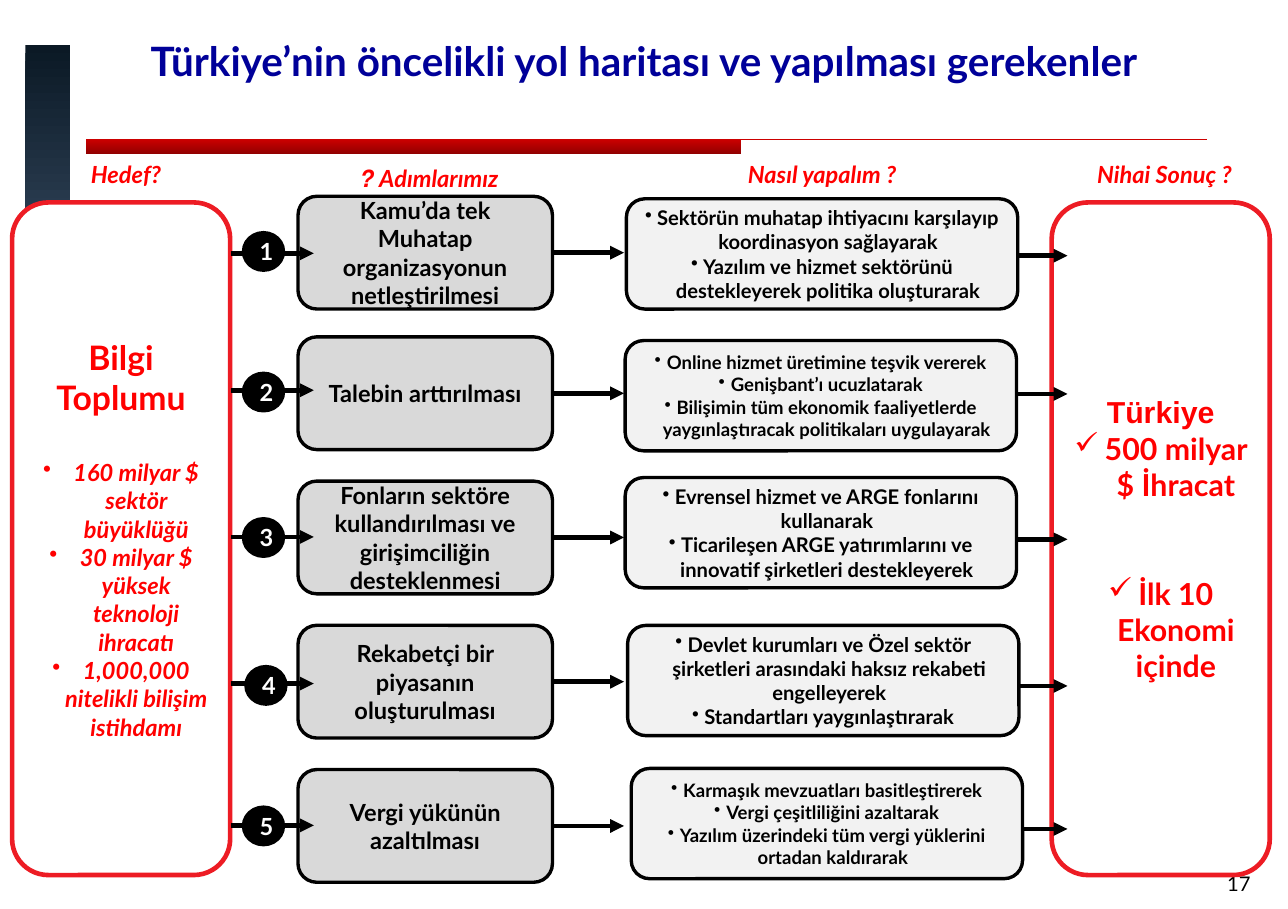
from pptx import Presentation
from pptx.dml.color import RGBColor
from pptx.enum.shapes import MSO_CONNECTOR, MSO_SHAPE
from pptx.enum.text import MSO_ANCHOR, PP_ALIGN
from pptx.oxml.ns import qn
from pptx.util import Inches, Pt
from lxml import etree

BLACK = RGBColor(0x00, 0x00, 0x00)
WHITE = RGBColor(0xFF, 0xFF, 0xFF)
NAVY = RGBColor(0x00, 0x00, 0x99)
RED = RGBColor(0xFF, 0x00, 0x00)
PANEL_RED = RGBColor(0xED, 0x1C, 0x24)
RULE_RED = RGBColor(0xCC, 0x00, 0x00)
RULE_DARK = RGBColor(0x92, 0x00, 0x00)
BAR_TOP = RGBColor(0x0B, 0x19, 0x25)
BAR_BOTTOM = RGBColor(0x2D, 0x40, 0x55)
STEP_GREY = RGBColor(0xD9, 0xD9, 0xD9)
METHOD_GREY = RGBColor(0xF2, 0xF2, 0xF2)

# Step text, step top, number (left, top), step arrow y, result arrow y,
# method (left, top), method text size, method items
ROWS = [
    ("Kamu’da tek\vMuhatap organizasyonun netleştirilmesi",
     1.62, (2.01, 1.92), 2.09, 2.11, (5.17, 1.64), 12,
     ["Sektörün muhatap ihtiyacını karşılayıp koordinasyon sağlayarak",
      "Yazılım ve hizmet sektörünü destekleyerek politika oluşturarak"]),
    ("Talebin arttırılması",
     2.78, (2.01, 3.08), 3.22, 3.25, (5.16, 2.81), 11,
     ["Online hizmet üretimine teşvik vererek",
      "Genişbant’ı ucuzlatarak",
      "Bilişimin tüm ekonomik faaliyetlerde yaygınlaştıracak politikaları uygulayarak"]),
    ("Fonların sektöre kullandırılması ve girişimciliğin desteklenmesi",
     3.97, (2.01, 4.28), 4.43, 4.45, (5.16, 3.94), 12,
     ["Evrensel hizmet ve ARGE fonlarını kullanarak",
      "Ticarileşen ARGE yatırımlarını ve innovatif şirketleri destekleyerek"]),
    ("Rekabetçi bir piyasanın oluşturulması",
     5.16, (2.03, 5.5), 5.64, 5.66, (5.18, 5.16), 12,
     ["Devlet kurumları ve Özel sektör şirketleri arasındaki haksız rekabeti engelleyerek",
      "Standartları yaygınlaştırarak"]),
    ("Vergi yükünün azaltılması",
     6.35, (2.01, 6.66), 6.81, 6.84, (5.21, 6.34), 11,
     ["Karmaşık mevzuatları basitleştirerek",
      "Vergi çeşitliliğini azaltarak",
      "Yazılım üzerindeki tüm vergi yüklerini ortadan kaldırarak"]),
]


def style(paragraph, size, color, bold=True, italic=False, font="Lato",
          align=PP_ALIGN.CENTER):
    paragraph.alignment = align
    for run in paragraph.runs:
        run.font.name = font
        run.font.size = Pt(size)
        run.font.bold = bold
        run.font.italic = italic
        run.font.color.rgb = color


def add_bullet(paragraph, mark, indent):
    properties = paragraph._p.get_or_add_pPr()
    properties.set("marL", str(Inches(indent)))
    properties.set("indent", str(-Inches(indent)))
    etree.SubElement(properties, qn("a:buChar")).set("char", mark)


def add_box(slide, kind, left, top, width, height, fill, line=None, line_width=2,
            side_inset=0.04):
    box = slide.shapes.add_shape(kind, Inches(left), Inches(top),
                                 Inches(width), Inches(height))
    box.shadow.inherit = False
    if isinstance(fill, tuple) and not isinstance(fill, RGBColor):
        box.fill.gradient()
        box.fill.gradient_angle = 270
        for stop, color in zip(box.fill.gradient_stops, fill):
            stop.color.rgb = color
    else:
        box.fill.solid()
        box.fill.fore_color.rgb = fill
    if line is None:
        box.line.fill.background()
    else:
        box.line.color.rgb = line
        box.line.width = Pt(line_width)
    frame = box.text_frame
    frame.word_wrap = True
    frame.vertical_anchor = MSO_ANCHOR.MIDDLE
    frame.margin_left = frame.margin_right = Inches(side_inset)
    return box


def add_label(slide, text, left, top, width, height, size, color, wrap=False, **look):
    label = slide.shapes.add_textbox(Inches(left), Inches(top),
                                     Inches(width), Inches(height))
    label.text_frame.word_wrap = wrap
    label.text_frame.text = text
    paragraph = label.text_frame.paragraphs[0]
    style(paragraph, size, color, **look)
    return paragraph


def add_line(slide, x1, y1, x2, y2, color=BLACK, width=2.75, arrow=True):
    line = slide.shapes.add_connector(MSO_CONNECTOR.STRAIGHT, Inches(x1), Inches(y1),
                                      Inches(x2), Inches(y2))
    line.line.color.rgb = color
    line.line.width = Pt(width)
    if arrow:
        etree.SubElement(line.line._get_or_add_ln(), qn("a:tailEnd")).set("type", "triangle")
    etree.SubElement(line._element.spPr, qn("a:effectLst"))
    return line


def add_panel(slide, left, heading, heading_size, heading_font, items, mark,
              size, italic, gaps):
    panel = add_box(slide, MSO_SHAPE.ROUNDED_RECTANGLE, left, 1.67, 1.8, 5.55,
                    WHITE, PANEL_RED, 2.75)
    frame = panel.text_frame
    frame.text = heading
    style(frame.paragraphs[0], heading_size, RED, font=heading_font)
    for item, gap in zip(items, gaps):
        paragraph = frame.add_paragraph()
        paragraph.text = item
        paragraph.space_before = Pt(gap)
        add_bullet(paragraph, mark, 0.25)
        style(paragraph, size, RED, italic=italic)


def add_row(slide, number, row):
    step_text, step_top, circle, step_y, result_y, method, size, items = row

    # Result arrow starts behind the method box
    add_line(slide, 8.22, result_y, 8.81, result_y)

    # Step with its arrow and number
    step = add_box(slide, MSO_SHAPE.ROUNDED_RECTANGLE, 2.46, step_top, 2.1, 0.93,
                   STEP_GREY, BLACK)
    step.text_frame.text = step_text
    style(step.text_frame.paragraphs[0], 14, BLACK)
    add_line(slide, 1.91, step_y, 2.59, step_y)
    badge = add_box(slide, MSO_SHAPE.OVAL, *circle, 0.33, 0.31, BLACK, BLACK, side_inset=0)
    badge.text_frame.margin_left = Inches(0.05)
    badge.text_frame.text = str(number)
    style(badge.text_frame.paragraphs[0], 14, WHITE)

    # Arrow to the method
    step_middle = step_top + 0.93 / 2
    add_line(slide, 4.56, step_middle, 5.15, step_middle).begin_connect(step, 3)

    # Method box
    frame = add_box(slide, MSO_SHAPE.ROUNDED_RECTANGLE, *method, 3.23, 0.91,
                    METHOD_GREY, BLACK, side_inset=0.02).text_frame
    frame.text = "\n".join(items)
    for paragraph in frame.paragraphs:
        add_bullet(paragraph, "•", 0.1)
        style(paragraph, size, BLACK)


def main():
    deck = Presentation()
    deck.slide_width, deck.slide_height = Inches(10.63), Inches(7.5)
    slide = deck.slides.add_slide(deck.slide_layouts[6])

    # Side bar and rule under the title
    add_box(slide, MSO_SHAPE.RECTANGLE, 0.21, 0.37, 0.37, 1.6, (BAR_TOP, BAR_BOTTOM))
    add_box(slide, MSO_SHAPE.RECTANGLE, 0.71, 1.15, 5.41, 0.12, (RULE_RED, RULE_DARK))
    add_line(slide, 0.71, 1.15, 9.96, 1.15, RULE_RED, 0.75, arrow=False)

    # Title and page number
    add_label(slide, "Türkiye’nin öncelikli yol haritası ve yapılması gerekenler",
              0, 0.25, 10.63, 0.5, 24, NAVY, wrap=True)
    add_label(slide, "17", 8.12, 7.14, 2.3, 0.22, 12, BLACK, wrap=True,
              bold=False, align=PP_ALIGN.RIGHT)

    # Goal and final result
    add_panel(slide, 0.1, "Bilgi Toplumu", 20, "Lato",
              ["160 milyar $ sektör büyüklüğü", "30 milyar $ yüksek teknoloji ihracatı",
               "1,000,000 nitelikli bilişim istihdamı"], "•", 14, True, [24, 0, 0])
    add_panel(slide, 8.68, "Türkiye", 18, "Arial",
              ["500 milyar $ İhracat", "İlk 10 Ekonomi içinde"], "✓", 18, False, [0, 43])

    # Steps and methods
    for number, row in enumerate(ROWS, 1):
        add_row(slide, number, row)

    # Column headings
    for text, left, top, width in [("Hedef?", 0.59, 1.27, 0.9),
                                   ("Adımlarımız ?", 2.76, 1.3, 1.55),
                                   ("Nasıl yapalım ?", 5.94, 1.27, 1.69),
                                   ("Nihai Sonuç ?", 8.84, 1.27, 1.54)]:
        heading = add_label(slide, text, left, top, width, 0.34, 14, RED, italic=True)
        if text.startswith("Adım"):
            heading._p.get_or_add_pPr().set("rtl", "1")

    deck.save("out.pptx")


if __name__ == "__main__":
    main()
